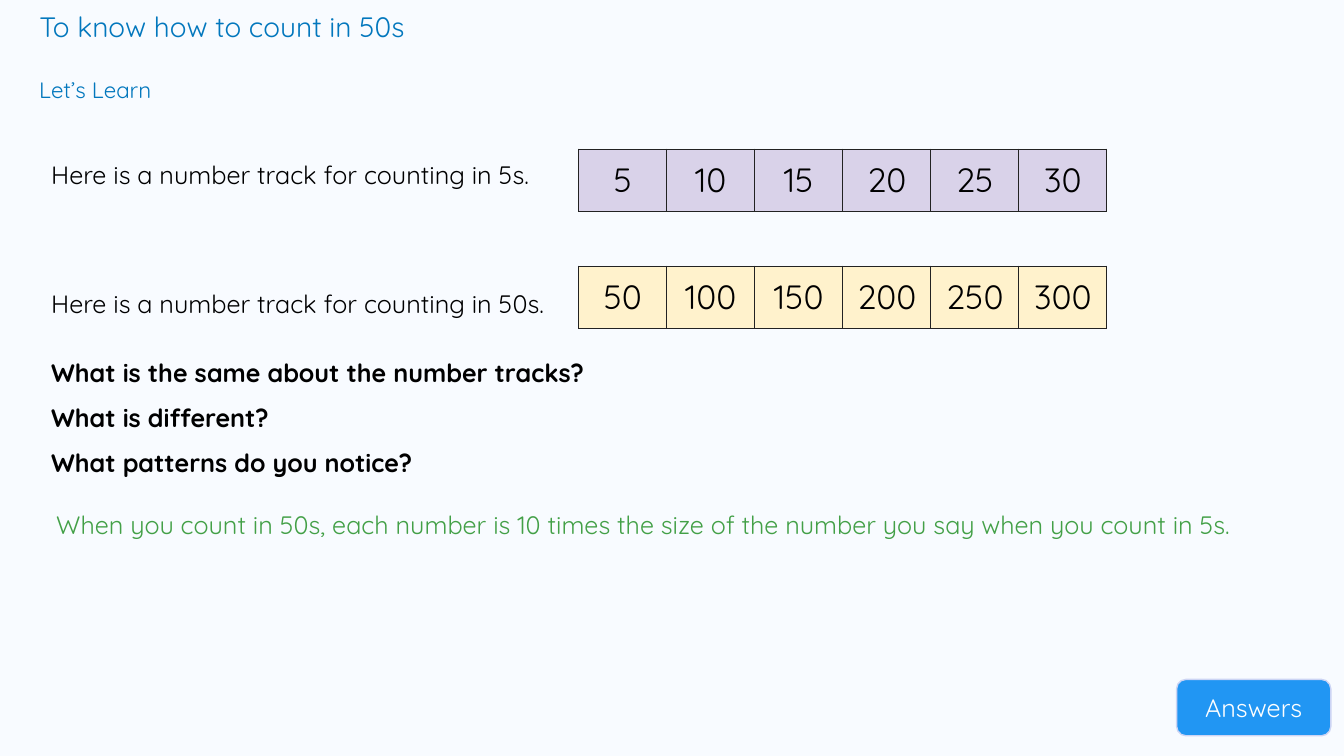
"""Build a slide on counting in 50s with two number tracks."""
from dataclasses import dataclass

from lxml import etree
from pptx import Presentation
from pptx.dml.color import RGBColor
from pptx.enum import shapes, text
from pptx.oxml import ns
from pptx.util import Inches, Pt


@dataclass(frozen=True)
class Theme:
    font: str = "Quicksand"
    background: str = "F8FBFF"
    heading: str = "0277BD"
    body: str = "000000"
    answer: str = "43A047"
    button: str = "2196F3"
    button_line: str = "CCD4F4"
    button_text: str = "FFFFFF"
    border: str = "222222"
    title_size: int = 20
    label_size: int = 16
    body_size: int = 18
    number_size: int = 24


THEME = Theme()
TITLE = "To know how to count in 50s"
LABEL = "Let’s Learn"
LESSON = [
    ("Here is a number track for counting in 5s.", False, 0),
    ("Here is a number track for counting in 50s.", False, 60),
    ("What is the same about the number tracks?", True, 16.5),
    ("What is different?", True, 0),
    ("What patterns do you notice?", True, 0),
]
ANSWER = ("When you count in 50s, each number is 10 times the size of "
          "the number you say when you count in 5s.")
BUTTON = "Answers"
TRACKS = [(5, 1.48, "D9D2E9"), (50, 2.64, "FFF2CC")]
TRACK_LEFT, TRACK_STEPS, CELL_W, CELL_H = 5.74, 6, 0.873, 0.61


def rgb(value):
    return RGBColor.from_string(value)


def apply(obj, **values):
    for name, value in values.items():
        setattr(obj, name, value)


def write(tf, lines, size, color, margin=0.05, spacing=1.0,
          align=text.PP_ALIGN.LEFT, anchor=text.MSO_ANCHOR.TOP):
    apply(tf, word_wrap=True, auto_size=text.MSO_AUTO_SIZE.NONE,
          vertical_anchor=anchor, margin_left=Inches(0.1),
          margin_right=Inches(0.1), margin_top=Inches(margin),
          margin_bottom=Inches(margin))
    for i, (line, bold, before) in enumerate(lines):
        p = tf.add_paragraph() if i else tf.paragraphs[0]
        apply(p, alignment=align, line_spacing=spacing, space_before=Pt(before))
        r = p.add_run()
        r.text = line
        apply(r.font, name=THEME.font, size=Pt(size), bold=bold)
        r.font.color.rgb = rgb(color)


def add_text(s, box, lines, size, color, **options):
    sp = s.shapes.add_textbox(*map(Inches, box))
    write(sp.text_frame, lines, size, color, **options)


def add_border(cell):
    tc_pr = cell._tc.get_or_add_tcPr()
    for side in ("lnL", "lnR", "lnT", "lnB"):
        ln = etree.SubElement(tc_pr, ns.qn(f"a:{side}"), w=str(Pt(0.75)))
        fill = etree.SubElement(ln, ns.qn("a:solidFill"))
        etree.SubElement(fill, ns.qn("a:srgbClr"), val=THEME.border)


def add_track(s, step, top, color):
    box = (TRACK_LEFT, top, CELL_W * TRACK_STEPS, CELL_H)
    table = s.shapes.add_table(1, TRACK_STEPS, *map(Inches, box)).table
    apply(table, first_row=False, horz_banding=False)
    for i, cell in enumerate(table.iter_cells(), 1):
        apply(cell, vertical_anchor=text.MSO_ANCHOR.MIDDLE,
              margin_left=Inches(0.1), margin_right=Inches(0.1),
              margin_top=Inches(0.1), margin_bottom=Inches(0.1))
        add_border(cell)
        cell.fill.solid()
        cell.fill.fore_color.rgb = rgb(color)
        p = cell.text_frame.paragraphs[0]
        p.alignment = text.PP_ALIGN.CENTER
        r = p.add_run()
        r.text = str(step * i)
        apply(r.font, name=THEME.font, size=Pt(THEME.number_size))
        r.font.color.rgb = rgb(THEME.body)


def add_button(s):
    sp = s.shapes.add_shape(shapes.MSO_SHAPE.ROUNDED_RECTANGLE,
                            *map(Inches, (11.67, 6.74, 1.53, 0.56)))
    sp.shadow.inherit = False
    sp.fill.solid()
    sp.fill.fore_color.rgb = rgb(THEME.button)
    sp.line.color.rgb = rgb(THEME.button_line)
    sp.line.width = Pt(1)
    write(sp.text_frame, [(BUTTON, False, 0)], THEME.body_size,
          THEME.button_text, align=text.PP_ALIGN.CENTER,
          anchor=text.MSO_ANCHOR.MIDDLE)


def main():
    prs = Presentation()
    apply(prs, slide_width=Inches(13.33), slide_height=Inches(7.5))
    s = prs.slides.add_slide(prs.slide_layouts[5])
    s.background.fill.solid()
    s.background.fill.fore_color.rgb = rgb(THEME.background)
    title = s.shapes.title
    apply(title, left=Inches(0.29), top=Inches(0.04),
          width=Inches(12.34), height=Inches(0.44))
    write(title.text_frame, [(TITLE, False, 0)], THEME.title_size, THEME.heading)
    add_text(s, (0.29, 0.71, 2.97, 0.46), [(LABEL, False, 0)],
             THEME.label_size, THEME.heading)
    add_button(s)
    add_text(s, (0.41, 1.33, 12.5, 3.53), LESSON, THEME.body_size,
             THEME.body, margin=0.1, spacing=1.5)
    for step, top, color in TRACKS:
        add_track(s, step, top, color)
    add_text(s, (0.46, 4.85, 11.97, 0.95), [(ANSWER, False, 0)],
             THEME.body_size, THEME.answer, spacing=1.5)
    prs.save("out.pptx")


if __name__ == "__main__":
    main()
